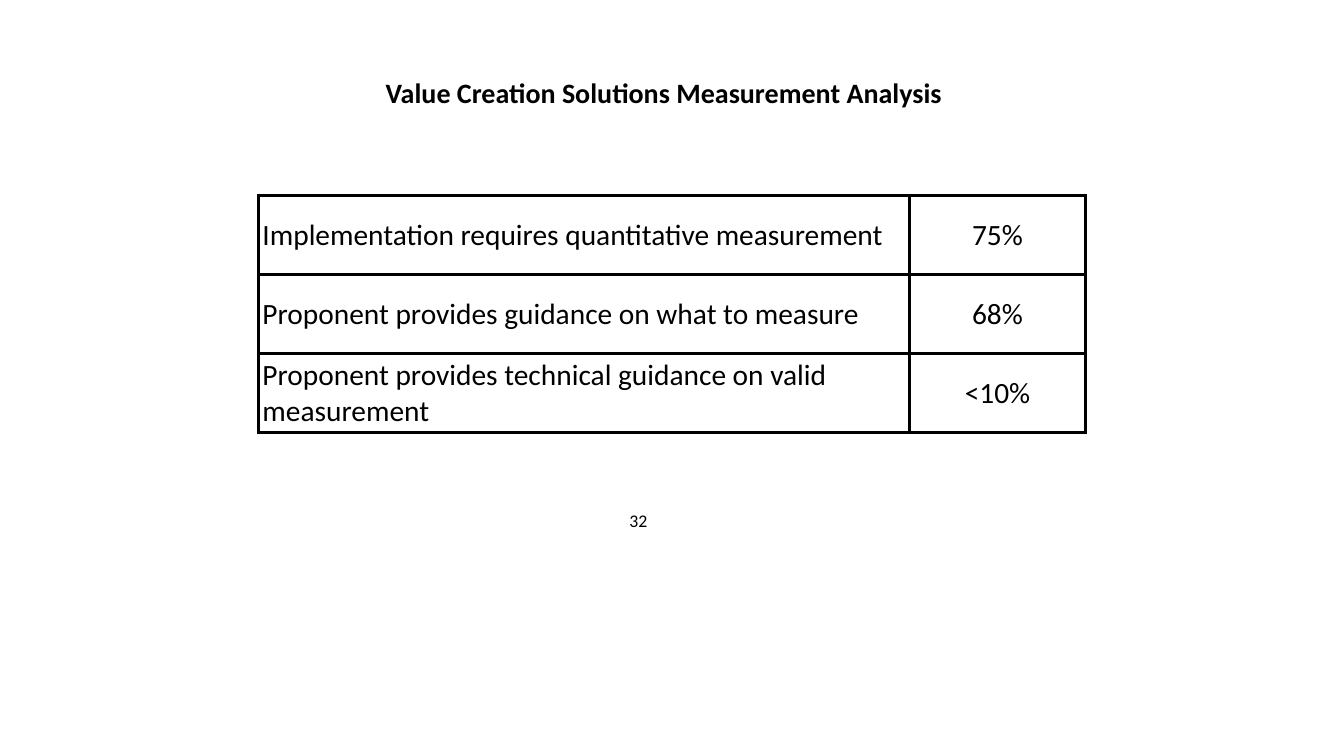
from lxml.etree import SubElement
from pptx import Presentation
from pptx.dml.color import RGBColor
from pptx.enum.text import MSO_ANCHOR, PP_ALIGN
from pptx.oxml.ns import qn
from pptx.util import Pt

BLACK = RGBColor(0, 0, 0)
FONT = "Calibri"
MEASURES = [
    ("Implementation requires quantitative measurement", "75%"),
    ("Proponent provides guidance on what to measure", "68%"),
    ("Proponent provides technical guidance on valid measurement", "<10%"),
]
COLUMN_WIDTHS = (465.2, 125.5)
ROW_HEIGHT = 56.4


def write_text(frame, text, size, bold=False, align=PP_ALIGN.CENTER):
    """Write one formatted paragraph into a text frame."""
    para = frame.paragraphs[0]
    para.alignment = align
    span = para.add_run()
    span.text = text
    span.font.name = FONT
    span.font.size = Pt(size)
    span.font.bold = bold
    span.font.color.rgb = BLACK


def add_text(page, text, left, top, width, height, anchor=MSO_ANCHOR.TOP, **style):
    """Add a text box with even margins."""
    box = page.shapes.add_textbox(Pt(left), Pt(top), Pt(width), Pt(height))
    frame = box.text_frame
    frame.word_wrap = True
    frame.vertical_anchor = anchor
    frame.margin_left = frame.margin_right = Pt(4.5)
    frame.margin_top = frame.margin_bottom = Pt(4.5)
    write_text(frame, text, **style)


def add_borders(cell, width):
    """Draw a solid black line on each side of a cell."""
    properties = cell._tc.get_or_add_tcPr()
    for side in ("a:lnL", "a:lnR", "a:lnT", "a:lnB"):
        line = SubElement(properties, qn(side), w=str(Pt(width)))
        fill = SubElement(line, qn("a:solidFill"))
        SubElement(fill, qn("a:srgbClr"), val=str(BLACK))


def format_cell(cell, text, align):
    """Fill one table cell with bordered, vertically centred text."""
    cell.vertical_anchor = MSO_ANCHOR.MIDDLE
    cell.margin_left = cell.margin_right = Pt(2.9)
    cell.margin_top = cell.margin_bottom = Pt(2.9)
    write_text(cell.text_frame, text, size=21, align=align)
    add_borders(cell, 2)
    cell.fill.background()


def add_measure_table(page, left, top):
    """Add the table of measures and their shares."""
    frame = page.shapes.add_table(
        len(MEASURES), len(COLUMN_WIDTHS), Pt(left), Pt(top),
        Pt(sum(COLUMN_WIDTHS)), Pt(ROW_HEIGHT * len(MEASURES)))
    table = frame.table
    table.first_row = False
    table.horz_banding = False
    for column, width in zip(table.columns, COLUMN_WIDTHS):
        column.width = Pt(width)
    for row, values in zip(table.rows, MEASURES):
        row.height = Pt(ROW_HEIGHT)
        for cell, text, align in zip(row.cells, values, (PP_ALIGN.LEFT, PP_ALIGN.CENTER)):
            format_cell(cell, text, align)


def main():
    """Build and save the slide."""
    deck = Presentation()
    deck.slide_width, deck.slide_height = Pt(960), Pt(540)
    page = deck.slides.add_slide(deck.slide_layouts[6])
    add_text(page, "Value Creation Solutions Measurement Analysis", 184.4, 43.6, 579.6, 44.6,
             anchor=MSO_ANCHOR.MIDDLE, size=20, bold=True)
    add_text(page, "32", 441.1, 359.3, 30, 24, size=12.7)
    add_measure_table(page, 184.6, 139.7)
    deck.save("out.pptx")


if __name__ == "__main__":
    main()
